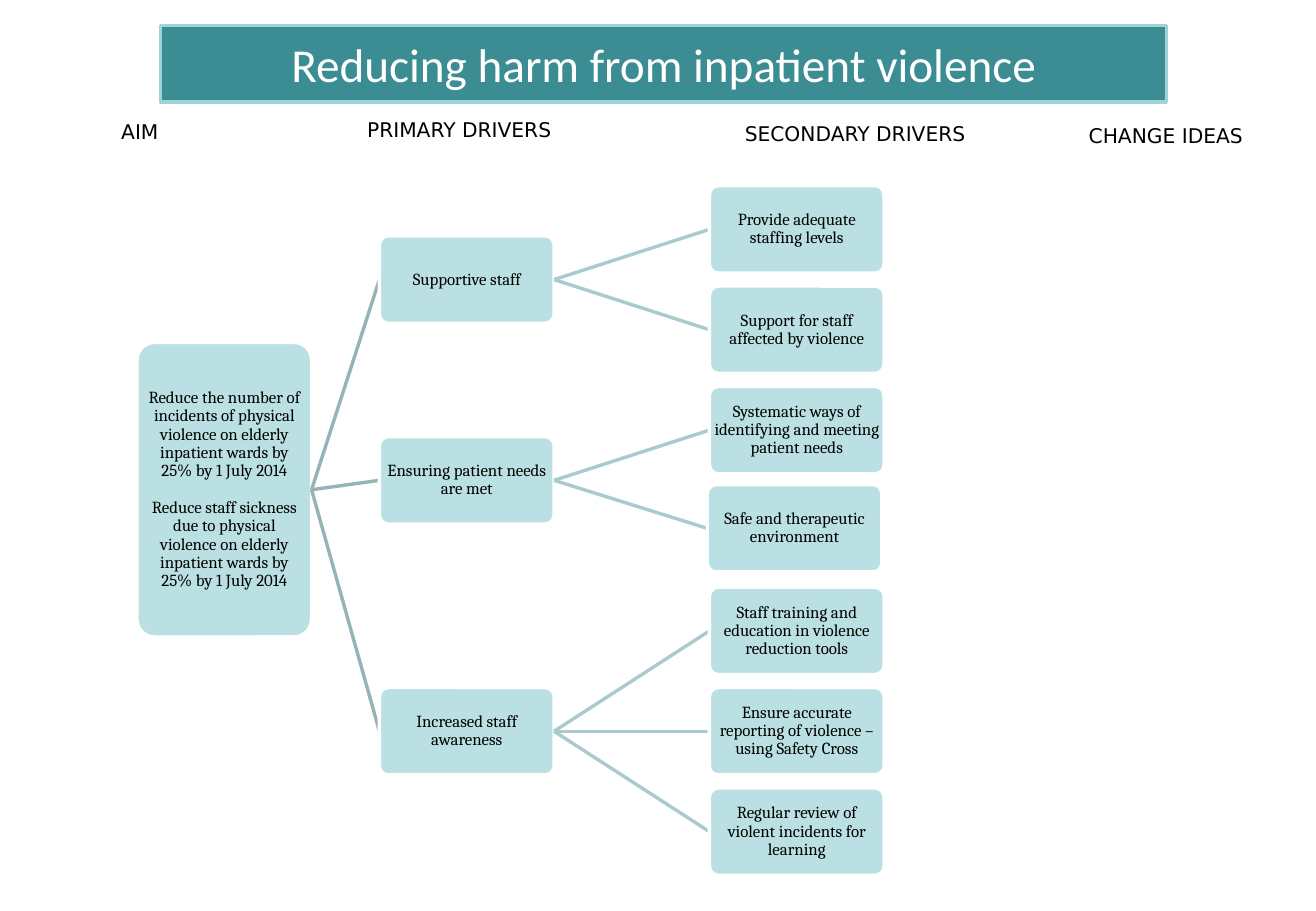
from pptx import Presentation
from pptx.dml.color import RGBColor
from pptx.enum.shapes import MSO_CONNECTOR, MSO_SHAPE
from pptx.enum.text import MSO_ANCHOR, MSO_AUTO_SIZE, PP_ALIGN
from pptx.oxml import parse_xml
from pptx.oxml.ns import nsdecls
from pptx.oxml.xmlchemy import OxmlElement
from pptx.util import Pt

deck = Presentation()
deck.slide_width, deck.slide_height = Pt(780), Pt(540)
slide = deck.slides.add_slide(deck.slide_layouts[5])
shapes = slide.shapes
color = RGBColor.from_string


def write(shape, texts, face, size, ink, frame, para):
    body = shape.text_frame
    for name, value in frame.items():
        setattr(body, name, value)
    for i, text in enumerate(texts):
        line = body.add_paragraph() if i else body.paragraphs[0]
        line.text = text
        line.alignment = PP_ALIGN.CENTER
        line.font.name, line.font.size = face, Pt(size)
        line.font.color.rgb = color(ink)
        for name, value in para.items():
            setattr(line, name, value)
        if i:
            line.space_before = Pt(size + 1)


def add_box(texts, left, top, high, parent=None, tint=None):
    # The link lies under the box it leads to
    if parent:
        link = shapes.add_connector(MSO_CONNECTOR.STRAIGHT, 0, 0, 0, 0)
        link.line.color.rgb, link.line.width = color(tint), Pt(2)
        link._element.spPr.append(OxmlElement("a:effectLst"))
        link.begin_connect(parent, 3)
    box = shapes.add_shape(MSO_SHAPE.ROUNDED_RECTANGLE,
                           Pt(left), Pt(top), Pt(WIDE), Pt(high))
    box.shadow.inherit = False
    box.adjustments[0] = 0.1
    box.fill.solid()
    box.fill.fore_color.rgb = color("BBE0E3")
    box.line.color.rgb, box.line.width = color("FFFFFF"), Pt(2)
    write(box, texts, "Cambria", 10, "000000", BOX, {"line_spacing": 0.9})
    if parent:
        link.end_connect(box, 1)
    return box


# Format values
WIDE, HIGH, STEP, FIRST = 103.5, 51.75, 59.5, 110.1
FRAME = {"word_wrap": True, "vertical_anchor": MSO_ANCHOR.MIDDLE,
         "auto_size": MSO_AUTO_SIZE.NONE}
SIDES = ("margin_left", "margin_top", "margin_right", "margin_bottom")
BOX = {**FRAME, **{side: Pt(0.7) for side in SIDES}}
HEAD = {"word_wrap": True, "auto_size": MSO_AUTO_SIZE.SHAPE_TO_FIT_TEXT}

# Title bar
title = shapes.title
place = {"left": 95.3, "top": 15, "width": 596, "height": 45.5}
for name, value in place.items():
    setattr(title, name, Pt(value))
title._element.spPr.append(parse_xml(
    f'<a:prstGeom {nsdecls("a")} prst="roundRect"><a:avLst/></a:prstGeom>'))
title.fill.solid()
title.fill.fore_color.rgb = color("3C8C93")
title.line.color.rgb, title.line.width = color("9ED3D7"), Pt(2)
write(title, ["Reducing harm from inpatient violence"],
      "Calibri", 28, "FFFFFF", FRAME, {})

# Column heads
heads = [("AIM", 27.4, 67.2, 111), ("PRIMARY DRIVERS", 193.7, 66.2, 157),
         ("SECONDARY DRIVERS", 393.1, 68.5, 227.5),
         ("CHANGE IDEAS", 612.5, 69.4, 157)]
for text, left, top, wide in heads:
    head = shapes.add_textbox(Pt(left), Pt(top), Pt(wide), Pt(21.8))
    write(head, [text], "DejaVu Sans", 12, "000000", HEAD, {})

# Aim
aim = add_box(
    ["Reduce the number of incidents of physical violence on elderly "
     "inpatient wards by 25% by 1 July 2014",
     "Reduce staff sickness due to physical violence on elderly "
     "inpatient wards by 25% by 1 July 2014"], 81.2, 203, 174.6)

# Drivers: each primary box is centred on its secondary boxes
drivers = {
    "Supportive staff": ["Provide adequate staffing levels",
                         "Support for staff affected by violence"],
    "Ensuring patient needs are met": [
        "Systematic ways of identifying and meeting patient needs",
        "Safe and therapeutic environment"],
    "Increased staff awareness": [
        "Staff training and education in violence reduction tools",
        "Ensure accurate reporting of violence – using Safety Cross",
        "Regular review of violent incidents for learning"],
}
nudge = {"Safe and therapeutic environment": 1.3}
row = 0
for main, parts in drivers.items():
    mid = row + (len(parts) - 1) / 2
    driver = add_box([main], 224.9, FIRST + mid * STEP, HIGH, aim, "96B3B6")
    for part in parts:
        shift = nudge.get(part, 0)
        add_box([part], 420.5 - shift, FIRST + row * STEP - shift, HIGH,
                driver, "AACBCE")
        row += 1

deck.save("out.pptx")
